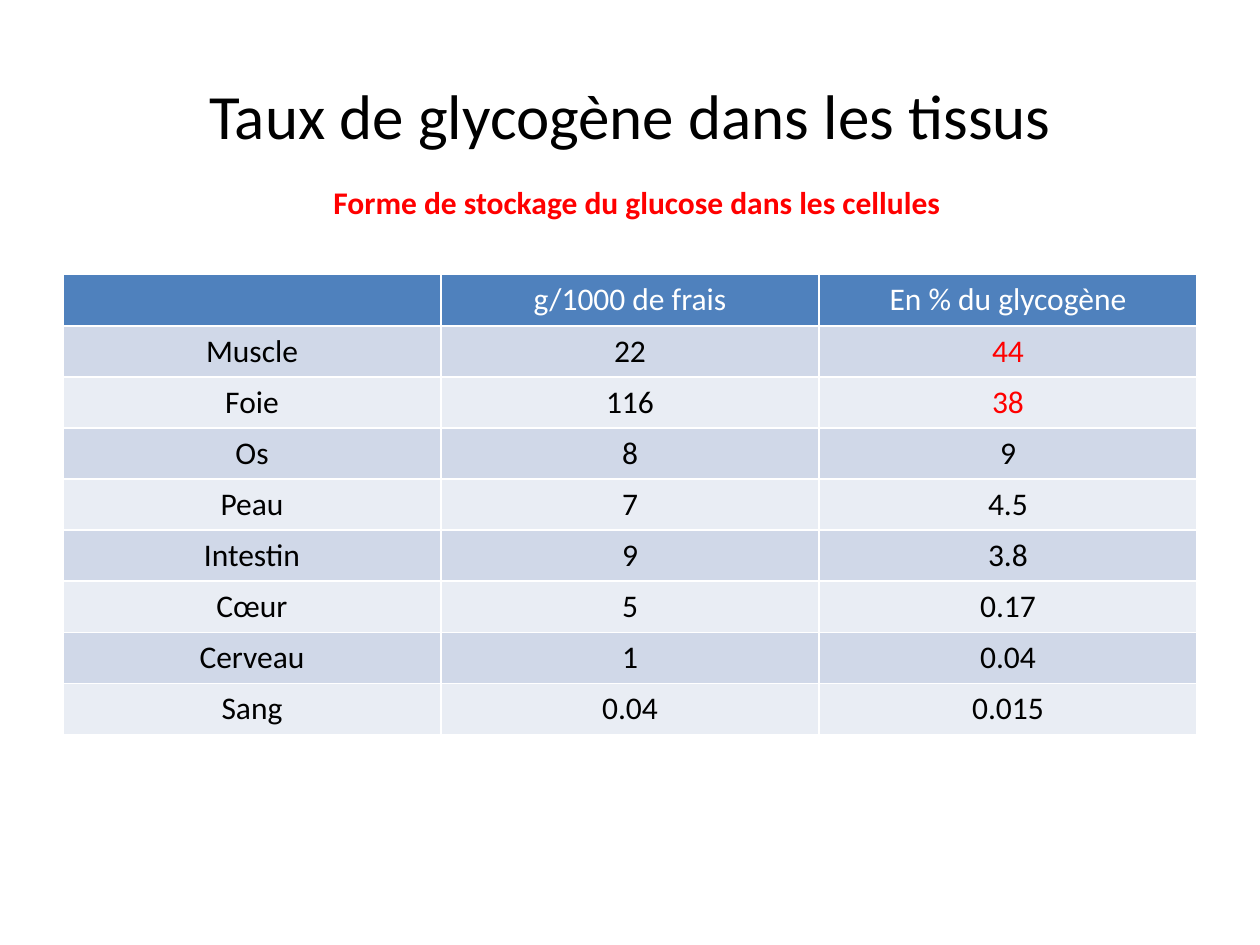
from pptx import Presentation
from pptx.dml.color import RGBColor
from pptx.enum.text import MSO_ANCHOR, PP_ALIGN
from pptx.util import Inches, Pt

CENTER = PP_ALIGN.CENTER
MIDDLE = MSO_ANCHOR.MIDDLE
FONT = "Calibri"
BLACK, WHITE, RED = "000000", "FFFFFF", "FF0000"
HEADER_FILL = "4F81BD"
BAND_FILLS = ["E9EDF4", "D0D8E8"]


def style_font(font, size, color, bold=False):
    font.name = FONT
    font.size = Pt(size)
    font.bold = bold
    font.color.rgb = RGBColor.from_string(color)


tissues = [
    ("", "g/1000 de frais", "En % du glycogène"),
    ("Muscle", "22", "44"),
    ("Foie", "116", "38"),
    ("Os", "8", "9"),
    ("Peau", "7", "4.5"),
    ("Intestin", "9", "3.8"),
    ("Cœur", "5", "0.17"),
    ("Cerveau", "1", "0.04"),
    ("Sang", "0.04", "0.015"),
]
main_stores = {"44", "38"}

prs = Presentation()
prs.slide_width = Inches(10)
prs.slide_height = Inches(7.5)
slide = prs.slides.add_slide(prs.slide_layouts[6])

margin = Inches(0.5)
content_width = prs.slide_width - 2 * margin
row_height = Inches(3.65) // len(tissues)

heading = slide.shapes.add_textbox(margin, Inches(0.58), content_width, Inches(1.25)).text_frame
heading.word_wrap = True
heading.vertical_anchor = MIDDLE
headline = heading.paragraphs[0]
headline.alignment = CENTER
title = headline.add_run()
title.text = "Taux de glycogène dans les tissus"
style_font(title.font, 36, BLACK)
headline.add_line_break()
indent = headline.add_run()
indent.text = " "
style_font(indent.font, 36, BLACK)
subtitle = headline.add_run()
subtitle.text = "Forme de stockage du glucose dans les cellules"
style_font(subtitle.font, 18, RED, bold=True)

glycogen = slide.shapes.add_table(
    len(tissues), len(tissues[0]), margin, Inches(2.18), content_width, row_height * len(tissues)
).table

for row, values in enumerate(tissues):
    glycogen.rows[row].height = row_height
    for col, value in enumerate(values):
        cell = glycogen.cell(row, col)
        cell.fill.solid()
        fill = BAND_FILLS[row % 2] if row else HEADER_FILL
        cell.fill.fore_color.rgb = RGBColor.from_string(fill)
        cell.text = value
        entry = cell.text_frame.paragraphs[0]
        entry.alignment = CENTER
        color = WHITE if row == 0 else RED if value in main_stores else BLACK
        style_font(entry.font, 18, color)

prs.save("out.pptx")
